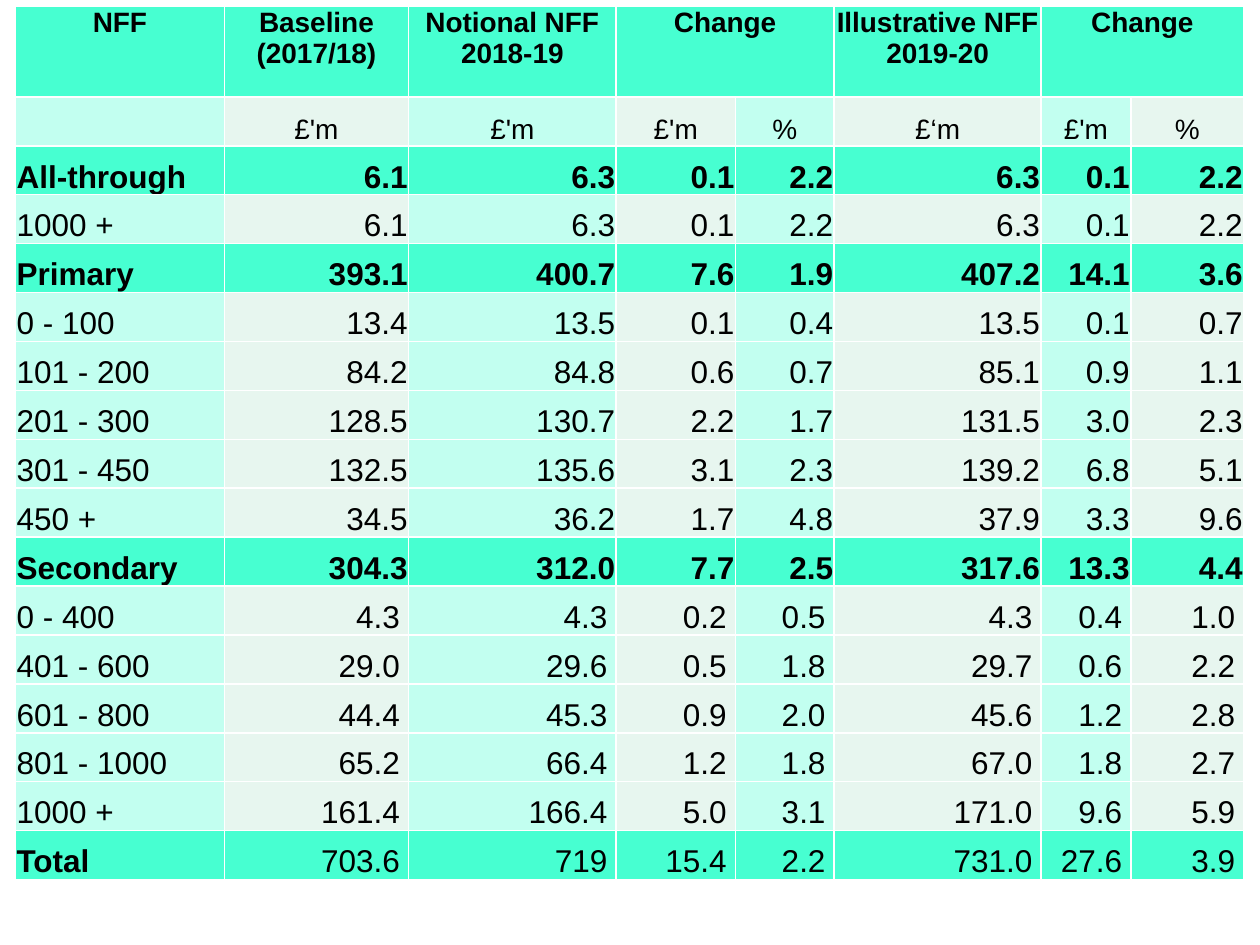
from dataclasses import dataclass

import pptx
import pptx.dml.color
import pptx.enum.text
import pptx.oxml
import pptx.oxml.ns
import pptx.util

Pt = pptx.util.Pt
RGBColor = pptx.dml.color.RGBColor
Align = pptx.enum.text.PP_ALIGN
Anchor = pptx.enum.text.MSO_ANCHOR


@dataclass(frozen=True)
class Theme:
    font: str = "Arial"
    text: str = "000000"
    border: str = "FFFFFF"
    strong: str = "47FFD1"
    light: str = "C2FFF0"
    pale: str = "E7F6EF"
    header_size: float = 16
    body_size: float = 18
    border_width: float = 1
    tight_inset: float = 0.6
    wide_inset: float = 5


THEME = Theme()

TABLE_BOX = (8.9, 3.6, 702, 499)
COLUMN_WIDTHS = (119.3, 105.3, 118.6, 68.2, 56.5, 118.2, 51.3, 64.6)
HEADER_HEIGHT = 51.8

HEADINGS = ("NFF", "Baseline (2017/18)", "Notional NFF 2018-19", "Change", "",
            "Illustrative NFF 2019-20", "Change", "")
CHANGE_COLUMNS = (3, 6)
UNITS = ("", "£'m", "£'m", "£'m", "%", "£‘m", "£'m", "%")
FUNDING = (
    ("All-through", "6.1", "6.3", "0.1", "2.2", "6.3", "0.1", "2.2"),
    ("1000 +", "6.1", "6.3", "0.1", "2.2", "6.3", "0.1", "2.2"),
    ("Primary", "393.1", "400.7", "7.6", "1.9", "407.2", "14.1", "3.6"),
    ("0 - 100", "13.4", "13.5", "0.1", "0.4", "13.5", "0.1", "0.7"),
    ("101 - 200", "84.2", "84.8", "0.6", "0.7", "85.1", "0.9", "1.1"),
    ("201 - 300", "128.5", "130.7", "2.2", "1.7", "131.5", "3.0", "2.3"),
    ("301 - 450", "132.5", "135.6", "3.1", "2.3", "139.2", "6.8", "5.1"),
    ("450 +", "34.5", "36.2", "1.7", "4.8", "37.9", "3.3", "9.6"),
    ("Secondary", "304.3", "312.0", "7.7", "2.5", "317.6", "13.3", "4.4"),
    ("0 - 400", "4.3", "4.3", "0.2", "0.5", "4.3", "0.4", "1.0"),
    ("401 - 600", "29.0", "29.6", "0.5", "1.8", "29.7", "0.6", "2.2"),
    ("601 - 800", "44.4", "45.3", "0.9", "2.0", "45.6", "1.2", "2.8"),
    ("801 - 1000", "65.2", "66.4", "1.2", "1.8", "67.0", "1.8", "2.7"),
    ("1000 +", "161.4", "166.4", "5.0", "3.1", "171.0", "9.6", "5.9"),
    ("Total", "703.6", "719", "15.4", "2.2", "731.0", "27.6", "3.9"),
)
SCHOOL_PHASES = ("All-through", "Primary", "Secondary")
PHASE_ROWS = [index for index, row in enumerate(FUNDING) if row[0] in SCHOOL_PHASES]


def add_borders(cell):
    properties = cell._tc.get_or_add_tcPr()
    for side in ("lnL", "lnR", "lnT", "lnB"):
        properties.append(pptx.oxml.parse_xml(
            f'<a:{side} {pptx.oxml.ns.nsdecls("a")} w="{Pt(THEME.border_width)}">'
            f'<a:solidFill><a:srgbClr val="{THEME.border}"/></a:solidFill></a:{side}>'))


def style_cell(cell, text, fill, size, align, anchor=Anchor.BOTTOM, bold=False, wide=False):
    add_borders(cell)
    cell.fill.solid()
    cell.fill.fore_color.rgb = RGBColor.from_string(fill)
    cell.vertical_anchor = anchor
    cell.margin_left = cell.margin_right = Pt(THEME.wide_inset if wide else THEME.tight_inset)
    cell.margin_top = Pt(0 if wide else THEME.tight_inset)
    cell.margin_bottom = Pt(0)
    paragraph = cell.text_frame.paragraphs[0]
    paragraph.text = text
    paragraph.alignment = align
    paragraph.font.size = Pt(size)
    for run in paragraph.runs:
        run.font.name = THEME.font
        run.font.size = Pt(size)
        run.font.bold = bold
        run.font.color.rgb = RGBColor.from_string(THEME.text)


def column_fill(column):
    return THEME.pale if column % 2 else THEME.light


def fill_header(table):
    for column, (heading, unit) in enumerate(zip(HEADINGS, UNITS)):
        style_cell(table.cell(0, column), heading, THEME.strong, THEME.header_size,
                   Align.CENTER, Anchor.TOP, bold=True)
        style_cell(table.cell(1, column), unit, column_fill(column), THEME.header_size,
                   Align.CENTER)
    for column in CHANGE_COLUMNS:
        table.cell(0, column).merge(table.cell(0, column + 1))


def fill_body(table):
    """Phase and total rows are strong; figures below the last phase sit further in."""
    for index, values in enumerate(FUNDING):
        is_phase = index in PHASE_ROWS
        is_total = values[0] == "Total"
        for column, value in enumerate(values):
            is_label = column == 0
            style_cell(
                table.cell(index + 2, column), value,
                THEME.strong if is_phase or is_total else column_fill(column),
                THEME.body_size,
                Align.LEFT if is_label else Align.RIGHT,
                bold=is_phase or (is_total and is_label),
                wide=index > PHASE_ROWS[-1] and not is_label)


def add_funding_table(slide, box):
    left, top, width, height = box
    row_count = len(FUNDING) + 2
    table = slide.shapes.add_table(row_count, len(HEADINGS), Pt(left), Pt(top),
                                   Pt(width), Pt(height)).table
    for column, column_width in zip(table.columns, COLUMN_WIDTHS):
        column.width = Pt(column_width)
    row_height = (height - HEADER_HEIGHT) / (row_count - 1)
    for index, row in enumerate(table.rows):
        row.height = Pt(row_height if index else HEADER_HEIGHT)
    fill_header(table)
    fill_body(table)


def main():
    presentation = pptx.Presentation()
    presentation.slide_width = Pt(720)
    presentation.slide_height = Pt(540)
    slide = presentation.slides.add_slide(presentation.slide_layouts[6])
    add_funding_table(slide, TABLE_BOX)
    presentation.save("out.pptx")


if __name__ == "__main__":
    main()
